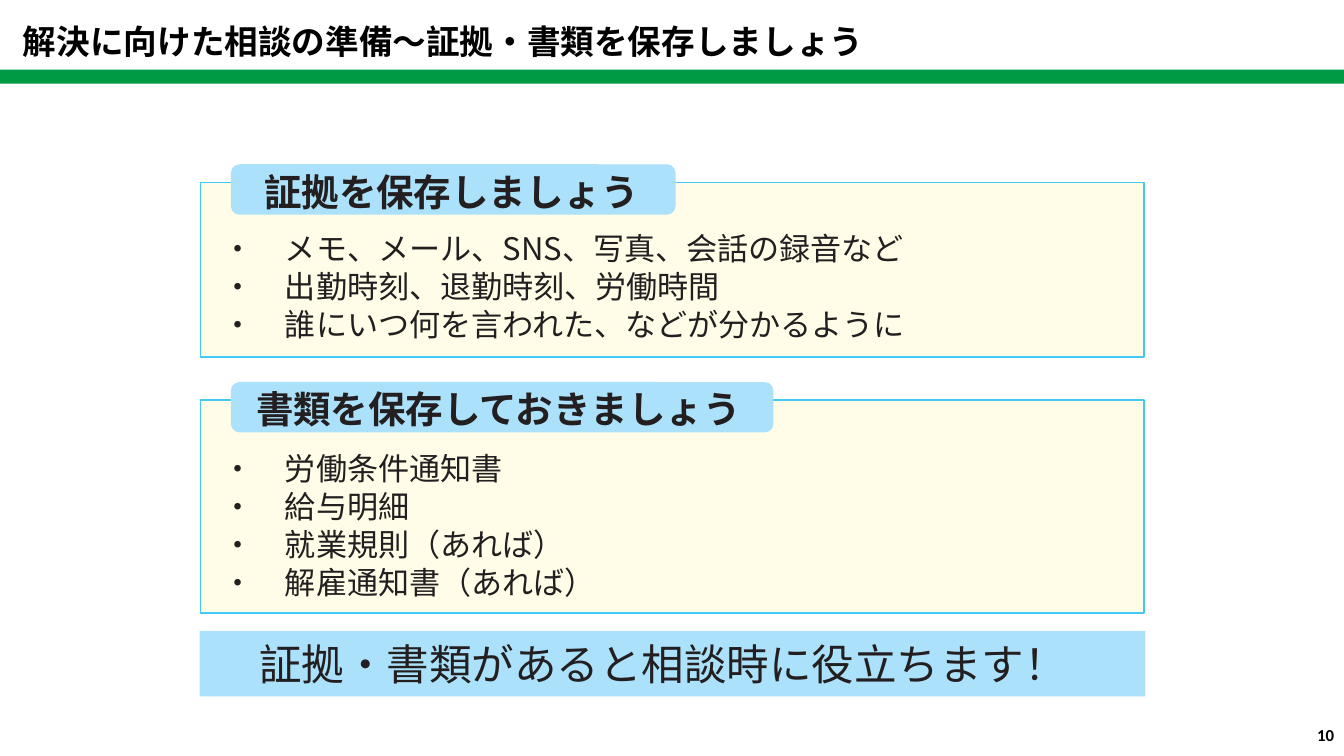
from pptx import Presentation
from pptx.dml.color import RGBColor
from pptx.enum.shapes import MSO_SHAPE
from pptx.enum.text import MSO_ANCHOR, PP_ALIGN
from pptx.oxml.ns import qn
from pptx.util import Inches, Pt
from lxml import etree

RECT, ROUNDED = MSO_SHAPE.RECTANGLE, MSO_SHAPE.ROUNDED_RECTANGLE
TOP, MIDDLE = MSO_ANCHOR.TOP, MSO_ANCHOR.MIDDLE
LEFT, RIGHT = PP_ALIGN.LEFT, PP_ALIGN.RIGHT
JAPANESE, LATIN = "Noto Sans CJK JP", "Calibri"
BLACK, INK = "000000", "231F20"
GREEN, SKY, CREAM, BORDER = "009944", "ABE1FA", "FFFDE8", "44C8F4"

PANELS = [
    # top, height, tab width, heading indent, gap below heading, heading, items
    (1.81, 1.73, 4.41, 0.42, 11.2, "証拠を保存しましょう",
     ["メモ、メール、SNS、写真、会話の録音など",
      "出勤時刻、退勤時刻、労働時間",
      "誰にいつ何を言われた、などが分かるように"]),
    (3.97, 2.11, 5.38, 0.34, 12.4, "書類を保存しておきましょう",
     ["労働条件通知書", "給与明細", "就業規則（あれば）", "解雇通知書（あれば）"]),
]


def rgb(hex_color):
    return RGBColor.from_string(hex_color)


def add_block(slide, kind, left, top, width, height, fill, line=None):
    block = slide.shapes.add_shape(
        kind, Inches(left), Inches(top), Inches(width), Inches(height))
    block.shadow.inherit = False
    block.fill.solid()
    block.fill.fore_color.rgb = rgb(fill)
    if line:
        block.line.color.rgb = rgb(line)
        block.line.width = Pt(1.25)
    else:
        block.line.fill.background()
    return block


def add_frame(slide, left, top, width, height, anchor=TOP, inset=(0, 0)):
    frame = slide.shapes.add_textbox(
        Inches(left), Inches(top), Inches(width), Inches(height)).text_frame
    frame.word_wrap = True
    frame.vertical_anchor = anchor
    frame.margin_left = frame.margin_right = Inches(inset[0])
    frame.margin_top = frame.margin_bottom = Inches(inset[1])
    return frame


def write(frame, text, size, color=INK, font=JAPANESE, bold=False, align=LEFT,
          indent=0, before=0, tight=True):
    """Add one paragraph; tight sets its line height to 1.21 times the size."""
    first = frame.paragraphs[0]
    paragraph = frame.add_paragraph() if first.runs else first
    paragraph.alignment = align
    paragraph.space_before = Pt(before)
    if tight:
        paragraph.line_spacing = Pt(round(size * 1.21, 1))
    paragraph._p.get_or_add_pPr().set("marL", str(Inches(indent)))
    run = paragraph.add_run()
    run.text = text
    run.font.size = Pt(size)
    run.font.bold = bold
    run.font.color.rgb = rgb(color)
    run.font.name = font
    east_asian = etree.SubElement(run._r.get_or_add_rPr(), qn("a:ea"))
    east_asian.set("typeface", font)


def add_header(slide, width):
    add_block(slide, RECT, 0, 0.69, width, 0.14, GREEN)
    title = add_frame(slide, 0.13, 0.16, 9.84, 0.5, inset=(0.1, 0.05))
    write(title, "解決に向けた相談の準備～証拠・書類を保存しましょう", 24,
          color=BLACK, bold=True)


def add_panel(slide, left, top, width, height, tab_width, heading_indent,
              gap, heading, items):
    # Box with a tab over its upper edge
    add_block(slide, RECT, left, top, width, height, CREAM, BORDER)
    tab_top = top - 0.18
    tab = add_block(slide, ROUNDED, left + 0.3, tab_top, tab_width, 0.5, SKY)
    tab.adjustments[0] = 0.17

    # Heading and its list
    body = add_frame(slide, left + 0.21, tab_top + 0.04, 7.6, height)
    write(body, heading, 26.8, bold=True, indent=heading_indent)
    for number, item in enumerate(items):
        write(body, "・\u3000".replace("\u3000", "　") + item, 22.2, indent=0.01,
              before=0.3 if number else gap)


def add_banner(slide, left, top, width, height):
    banner = add_block(slide, RECT, left, top, width, height, SKY).text_frame
    banner.word_wrap = True
    banner.vertical_anchor = MIDDLE
    banner.margin_left = banner.margin_right = 0
    write(banner, "証拠・書類があると相談時に役立ちます！", 30.4,
          indent=0.59, tight=False)


def add_page_number(slide, left, top, width, height):
    number = add_frame(slide, left, top, width, height, MIDDLE, (0.1, 0.05))
    write(number, "10", 12, color=BLACK, font=LATIN, bold=True, align=RIGHT,
          tight=False)


def main():
    deck = Presentation()
    deck.slide_width, deck.slide_height = Inches(13.33), Inches(7.5)
    slide = deck.slides.add_slide(deck.slide_layouts[6])
    add_header(slide, 13.33)
    for top, height, *content in PANELS:
        add_panel(slide, 1.99, top, 9.36, height, *content)
    add_banner(slide, 1.98, 6.26, 9.38, 0.65)
    add_page_number(slide, 10.22, 7.09, 3.11, 0.4)
    deck.save("out.pptx")


if __name__ == "__main__":
    main()
